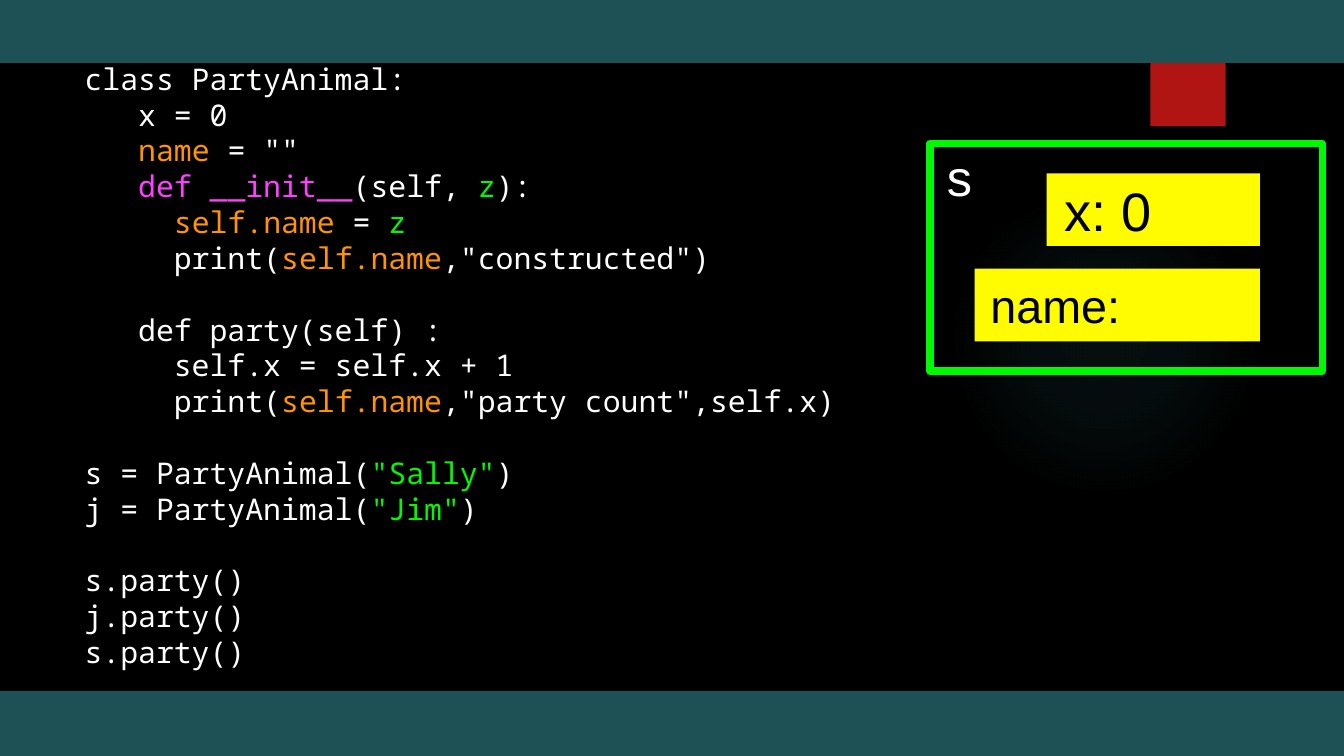
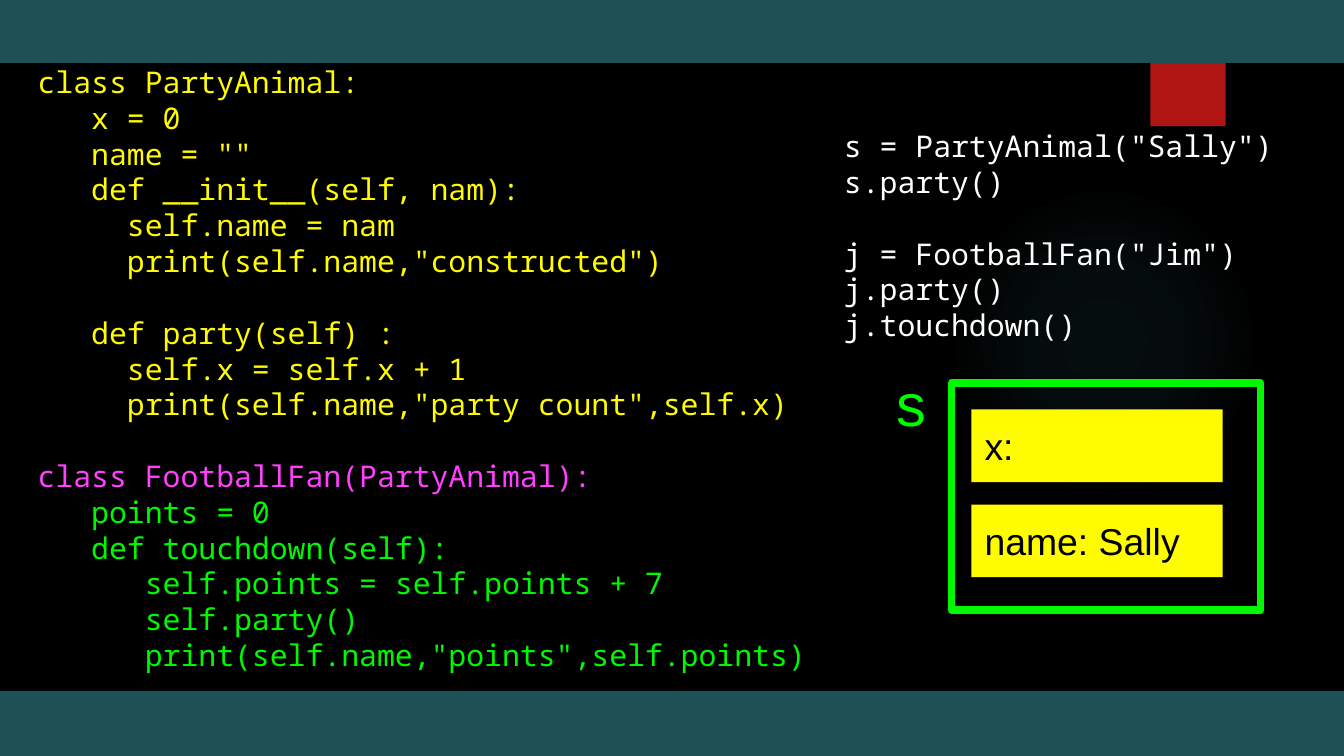
from lxml import etree
from pptx import Presentation
from pptx import util as u
from pptx.dml.color import RGBColor
from pptx.enum import shapes, text
from pptx.oxml import ns

Pt = u.Pt

# Colours
BLACK = RGBColor(0x00, 0x00, 0x00)
WHITE = RGBColor(0xFF, 0xFF, 0xFF)
TEAL = RGBColor(0x1E, 0x51, 0x55)
RED = RGBColor(0xB0, 0x15, 0x13)
GLOW = RGBColor(0x50, 0xB9, 0xC1)
ORANGE = RGBColor(0xFF, 0x93, 0x00)
PINK = RGBColor(0xFF, 0x40, 0xFF)
GREEN = RGBColor(0x00, 0xF9, 0x00)
LABEL_GREEN = RGBColor(0x00, 0xFA, 0x00)
YELLOW = RGBColor(0xFF, 0xFB, 0x00)

# Shared sizes and fonts
PAGE_W, PAGE_H = 720, 405
TOP_BAND, BOTTOM_BAND = 33.8, 370.1
CODE_FONT, LABEL_FONT = "Noto Sans Mono", "Arial"
CODE_SIZE, CODE_PITCH = 16, 19.2
INSET = 1.44
SPACE_WIDTH = 0.28  # width of a space in the label font, in ems
FIELD_H = 38.9
CARD_H = 121.7
CARD_LINE = 4

# Code lines: plain strings take the block colour, pairs carry their own;
# an empty line becomes space above the next one
CONSTRUCTOR_CODE = [
    ["class PartyAnimal:"],
    ["   x = 0"],
    ["   ", ("name", ORANGE), ' = ""'],
    ["   ", ("def __init__", PINK), "(self, ", ("z", GREEN), "):"],
    ["     ", ("self.name", ORANGE), " = ", ("z", GREEN)],
    ["     print(", ("self.name", ORANGE), ',"constructed")'],
    [],
    ["   def party(self) :"],
    ["     self.x = self.x + 1"],
    ["     print(", ("self.name", ORANGE), ',"party count",self.x)'],
    [],
    ["s = PartyAnimal(", ('"Sally"', GREEN), ")"],
    ["j = PartyAnimal(", ('"Jim"', GREEN), ")"],
    [],
    ["s.party()"],
    ["j.party()"],
    ["s.party()"],
]
INHERITANCE_CODE = [
    ["class PartyAnimal:"],
    ["   x = 0"],
    ['   name = ""'],
    ["   def __init__(self, nam):"],
    ["     self.name = nam"],
    ['     print(self.name,"constructed")'],
    [],
    ["   def party(self) :"],
    ["     self.x = self.x + 1"],
    ['     print(self.name,"party count",self.x)'],
    [],
    [("class FootballFan(PartyAnimal):", PINK)],
    [("   points = 0", GREEN)],
    [("   def touchdown(self):", GREEN)],
    [("      self.points = self.points + 7", GREEN)],
    [("      self.party()", GREEN)],
    [('      print(self.name,"points",self.points)', GREEN)],
]
USAGE_CODE = [
    ['s = PartyAnimal("Sally")'],
    ["s.party()"],
    [],
    ['j = FootballFan("Jim")'],
    ["j.party()"],
    ["j.touchdown()"],
]


def apply(target, values):
    for name, value in values.items():
        setattr(target, name, value)


def set_frame(box, anchor, left=INSET, inset=INSET, wrap=True):
    apply(box.text_frame, {
        "word_wrap": wrap,
        "vertical_anchor": anchor,
        "margin_left": Pt(left),
        "margin_top": Pt(inset),
        "margin_right": Pt(inset),
        "margin_bottom": Pt(inset),
    })


def add_span(para, words, font, size, colour):
    span = para.add_run()
    span.text = words
    apply(span.font, {"name": font, "size": Pt(size)})
    span.font.color.rgb = colour


def add_block(page, place, fill=None, line=None,
              kind=shapes.MSO_SHAPE.RECTANGLE):
    block = page.shapes.add_shape(kind, *map(Pt, place))
    block.shadow.inherit = False
    if fill is None:
        block.fill.background()
    else:
        block.fill.solid()
        block.fill.fore_color.rgb = fill
    if line is None:
        block.line.fill.background()
    else:
        block.line.color.rgb = line
        block.line.width = Pt(CARD_LINE)
    return block


def add_glow(page):
    glow = add_block(page, (508.3, 99.4, 166.3, 166.3), fill=GLOW,
                     kind=shapes.MSO_SHAPE.OVAL)
    stops = "".join(
        f'<a:gs pos="{at * 1000}"><a:srgbClr val="{GLOW}">'
        f'<a:alpha val="{alpha * 1000}"/></a:srgbClr></a:gs>'
        for at, alpha in ((0, 7), (36, 6), (69, 0)))
    gradient = etree.fromstring(
        f'<a:gradFill xmlns:a="{ns.nsuri("a")}"><a:gsLst>{stops}</a:gsLst>'
        '<a:path path="circle"><a:fillToRect l="50000" t="50000" '
        'r="50000" b="50000"/></a:path></a:gradFill>')
    props = glow.element.spPr
    props.replace(props.find(ns.qn("a:solidFill")), gradient)


def add_page(deck):
    """A blank page with the glow, red tab and teal bands."""
    page = deck.slides.add_slide(deck.slide_layouts[6])
    add_glow(page)
    add_block(page, (616.3, 0, 40.3, 67.7), fill=RED)
    add_block(page, (0, 0, PAGE_W, TOP_BAND), fill=TEAL)
    add_block(page, (0, BOTTOM_BAND, PAGE_W, PAGE_H - BOTTOM_BAND), fill=TEAL)
    return page


def add_code(page, place, lines, colour):
    box = page.shapes.add_textbox(*map(Pt, place))
    set_frame(box, text.MSO_ANCHOR.MIDDLE)
    para, gap = None, 0
    for line in lines:
        if not line:
            gap += CODE_PITCH
            continue
        frame = box.text_frame
        para = frame.paragraphs[0] if para is None else frame.add_paragraph()
        apply(para, {"line_spacing": Pt(CODE_PITCH), "space_before": Pt(gap)})
        gap = 0
        for part in line:
            words, tint = (part, colour) if isinstance(part, str) else part
            add_span(para, words, CODE_FONT, CODE_SIZE, tint)


def add_label(block, words, size, colour, anchor=text.MSO_ANCHOR.MIDDLE):
    set_frame(block, anchor, left=INSET + SPACE_WIDTH * size)
    para = block.text_frame.paragraphs[0]
    para.alignment = text.PP_ALIGN.LEFT
    add_span(para, words, LABEL_FONT, size, colour)


def add_field(page, left, top, width, words, size):
    field = add_block(page, (left, top, width, FIELD_H), fill=YELLOW)
    add_label(field, words, size, BLACK)


def add_card(page, left, top, width):
    return add_block(page, (left, top, width, CARD_H), line=GREEN)


def build_constructor_page(deck):
    page = add_page(deck)
    add_code(page, (43.9, 13.7, 443.5, 363.6), CONSTRUCTOR_CODE, WHITE)
    card = add_card(page, 498.2, 77, 210.2)
    add_label(card, "s", 27, WHITE, text.MSO_ANCHOR.TOP)
    right = 675
    for words, size, top, width in (("x: 0", 29, 92.9, 114.3),
                                    ("name:", 25, 144, 152.8)):
        add_field(page, right - width, top, width, words, size)


def build_inheritance_page(deck):
    page = add_page(deck)
    add_code(page, (18.7, 12.2, 421.2, 370.1), INHERITANCE_CODE, YELLOW)
    add_code(page, (450.7, 59.8, 256.3, 132.5), USAGE_CODE, WHITE)
    add_card(page, 509.8, 205.2, 165.6)
    for row, words in enumerate(("x:", "name: Sally")):
        add_field(page, 520.4, 219.4 + row * 51, 134.6, words, 20)
    # Name of the object beside its card
    name = page.shapes.add_textbox(*map(Pt, (473, 193, 27.4, 46.1)))
    set_frame(name, text.MSO_ANCHOR.TOP, left=7.2, inset=3.6)
    add_span(name.text_frame.paragraphs[0], "s", LABEL_FONT, 32, LABEL_GREEN)


def main():
    deck = Presentation()
    apply(deck, {"slide_width": Pt(PAGE_W), "slide_height": Pt(PAGE_H)})
    backdrop = deck.slide_master.background.fill
    backdrop.solid()
    backdrop.fore_color.rgb = BLACK
    build_constructor_page(deck)
    build_inheritance_page(deck)
    deck.save("out.pptx")


if __name__ == "__main__":
    main()
